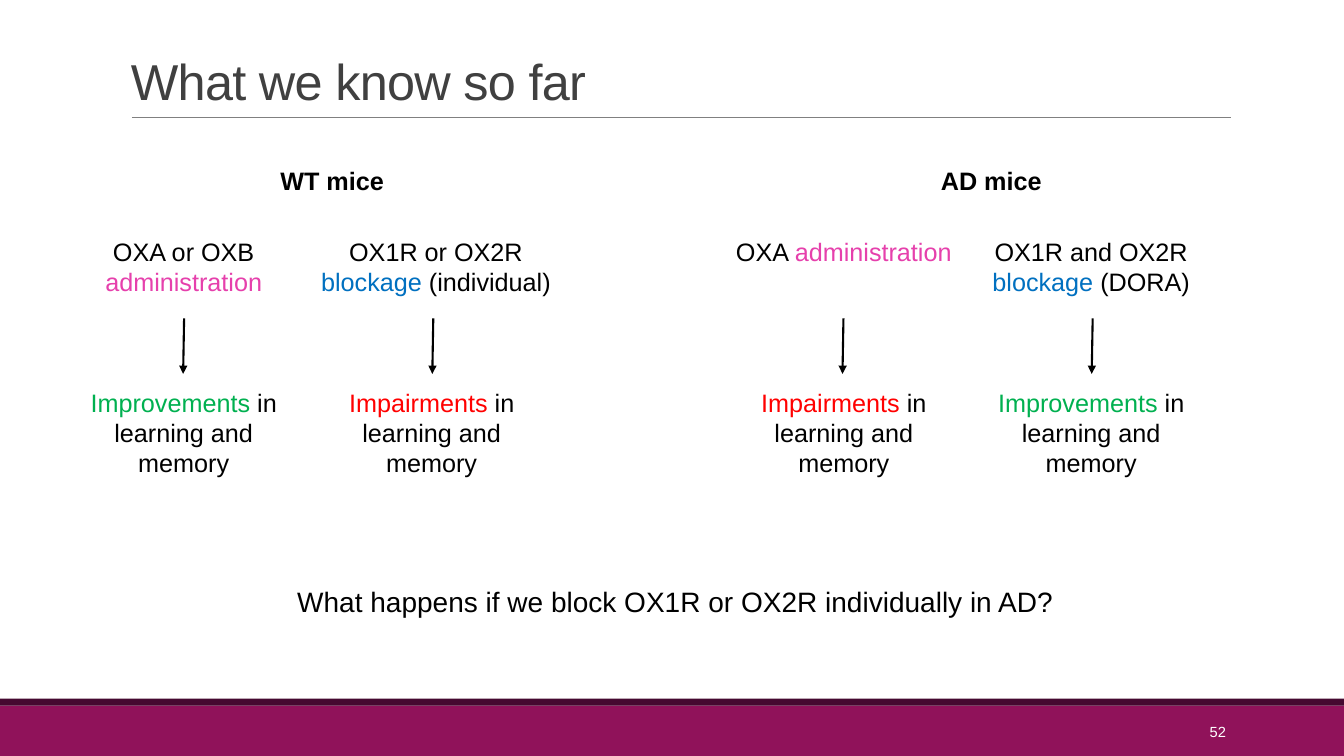
"""Build the slide summing up orexin findings in WT and AD mice."""
from lxml.etree import SubElement
from pptx import Presentation
from pptx.dml.color import RGBColor
from pptx.enum.shapes import MSO_CONNECTOR, MSO_SHAPE
from pptx.enum.text import MSO_ANCHOR, PP_ALIGN
from pptx.oxml.ns import qn
from pptx.util import Pt

BLACK, GREEN, RED, PINK, BLUE = "000000", "00B050", "FF0000", "E640AC", "0070C0"


def color(hex_string):
    return RGBColor.from_string(hex_string)


def add_text(runs, left, top, width, height, size=18, bold=False,
             align=PP_ALIGN.CENTER, anchor=MSO_ANCHOR.TOP, line_spacing=1.0, tracking=0):
    box = slide.shapes.add_textbox(Pt(left), Pt(top), Pt(width), Pt(height))
    frame = box.text_frame
    frame.word_wrap = True
    frame.vertical_anchor = anchor
    paragraph = frame.paragraphs[0]
    paragraph.alignment = align
    paragraph.line_spacing = line_spacing
    for text, hex_string in runs:
        run = paragraph.add_run()
        run.text = text
        run.font.name = "Arial"
        run.font.size = Pt(size)
        run.font.bold = bold
        run.font.color.rgb = color(hex_string)
        if tracking:
            run.font._element.set("spc", str(int(tracking * 100)))


presentation = Presentation()
presentation.slide_width, presentation.slide_height = Pt(960), Pt(540)
slide = presentation.slides.add_slide(presentation.slide_layouts[6])

for top, height, fill in [(504, 36, "90125A"), (499, 5, "450930")]:
    bar = slide.shapes.add_shape(MSO_SHAPE.RECTANGLE, 0, Pt(top), Pt(960), Pt(height))
    bar.shadow.inherit = False
    bar.fill.solid()
    bar.fill.fore_color.rgb = color(fill)
    bar.line.fill.background()

add_text([("What we know so far", "404040")], 86.4, 22.3, 792, 60.5, size=36,
         align=PP_ALIGN.LEFT, anchor=MSO_ANCHOR.BOTTOM, line_spacing=0.85, tracking=-0.5)
add_text([("52", "FFFFFF")], 779.8, 508.3, 103, 28.8, size=10.5,
         align=PP_ALIGN.RIGHT, anchor=MSO_ANCHOR.MIDDLE)

for group, left in [("WT mice", 173.5), ("AD mice", 644.4)]:
    add_text([(group, BLACK)], left, 114.5, 127.4, 29, bold=True)

columns = [
    (42.5, 131.5, [("OXA or OXB ", BLACK), ("administration", PINK)], ("Improvements", GREEN)),
    (219.6, 309.5, [("OX1R or OX2R ", BLACK), ("blockage", BLUE), (" (individual)", BLACK)],
     ("Impairments", RED)),
    (514, 602.5, [("OXA ", BLACK), ("administration", PINK)], ("Impairments", RED)),
    (690.7, 780.5, [("OX1R and OX2R ", BLACK), ("blockage", BLUE), (" (DORA)", BLACK)],
     ("Improvements", GREEN)),
]
lines = [(94.3, 83.5, 879.1, 83.5, "808080", 0.5, False)]
for left, arrow_x, treatment, outcome in columns:
    treatment_width = 183.6 if len(treatment) == 3 and "or" in treatment[0][0] else 177.5
    add_text(treatment, left, 165.4, treatment_width, 51)
    add_text([outcome, (" in learning and memory", BLACK)], left, 272.9, 177.5, 72.7)
    lines.append((arrow_x, 227.5, arrow_x - 0.7, 267.1, BLACK, 1.5, True))

for start_x, start_y, end_x, end_y, stroke, weight, has_arrow in lines:
    connector = slide.shapes.add_connector(
        MSO_CONNECTOR.STRAIGHT, Pt(start_x), Pt(start_y), Pt(end_x), Pt(end_y))
    connector.line.color.rgb = color(stroke)
    connector.line.width = Pt(weight)
    if has_arrow:
        SubElement(connector.line._get_or_add_ln(), qn("a:tailEnd"), type="triangle")
    SubElement(connector._element.spPr, qn("a:effectLst"))

add_text([("What happens if we block OX1R or OX2R individually in AD?", BLACK)],
         132.5, 414, 699.8, 31.5, size=20)

presentation.save("out.pptx")
